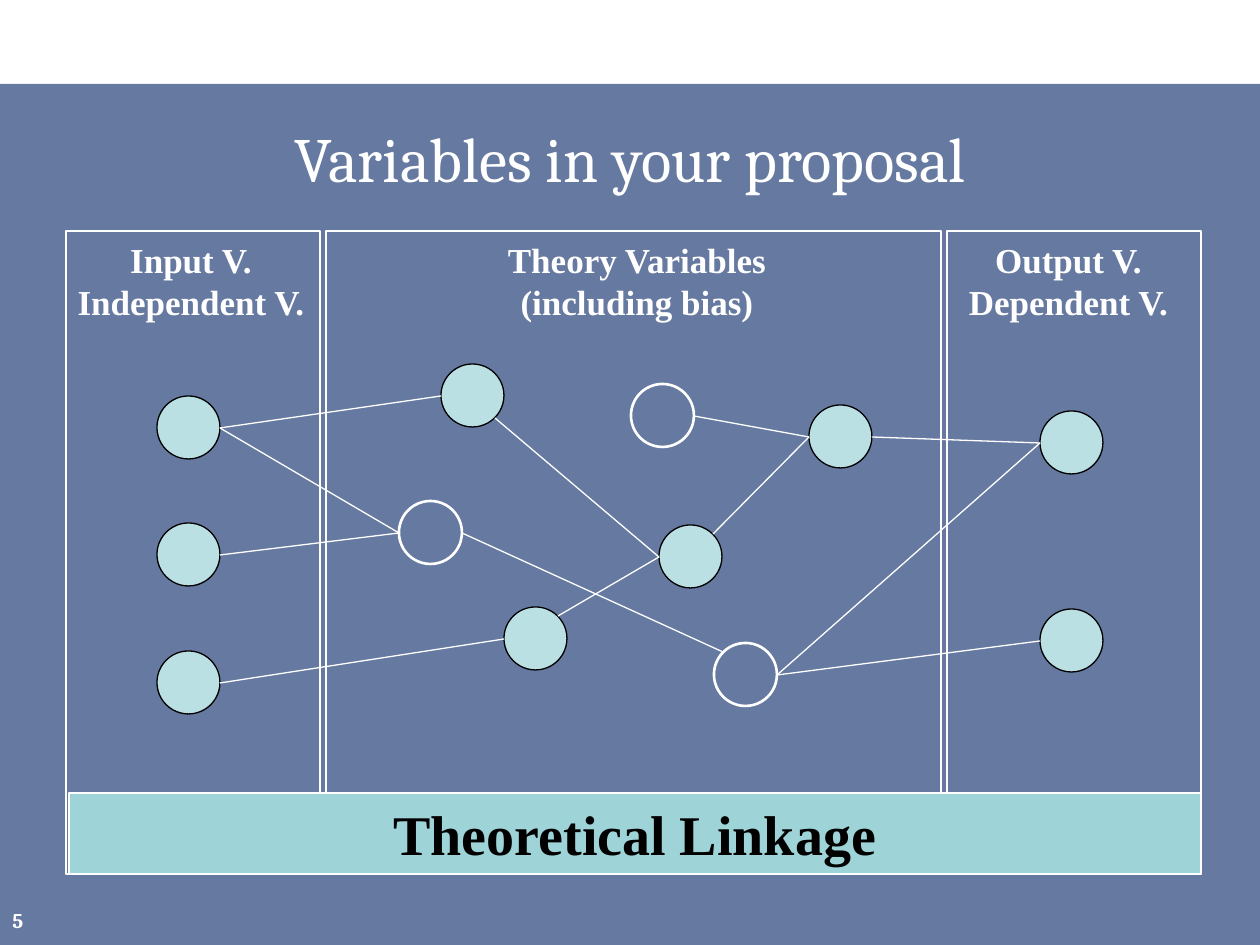
"""Build the slide that links input, theory and output variables."""
from lxml import etree
from pptx import Presentation
from pptx.dml.color import RGBColor
from pptx.enum.shapes import MSO_CONNECTOR, MSO_SHAPE
from pptx.enum.text import MSO_ANCHOR, PP_ALIGN
from pptx.oxml.ns import qn
from pptx.util import Emu, Pt

RECT, OVAL, STRAIGHT = MSO_SHAPE.RECTANGLE, MSO_SHAPE.OVAL, MSO_CONNECTOR.STRAIGHT
LEFT, CENTER, MIDDLE, TOP = PP_ALIGN.LEFT, PP_ALIGN.CENTER, MSO_ANCHOR.MIDDLE, MSO_ANCHOR.TOP
WHITE = RGBColor(0xFF, 0xFF, 0xFF)
BLACK = RGBColor(0x00, 0x00, 0x00)
SLATE = RGBColor(0x66, 0x79, 0xA0)
TEAL = RGBColor(0x9E, 0xD3, 0xD7)
PALE = RGBColor(0xBB, 0xE0, 0xE3)
PX = 914400 / 126
NODE = 63


def add_box(kind, box, fill, line, width):
    sp = s.shapes.add_shape(kind, *[Emu(round(v * PX)) for v in box])
    sp.shadow.inherit = False
    if fill is None:
        sp.fill.background()
    else:
        sp.fill.solid()
        sp.fill.fore_color.rgb = fill
    if line is None:
        sp.line.fill.background()
    else:
        sp.line.color.rgb = line
        sp.line.width = Pt(width)
    return sp


def set_text(sp, lines, color, align, anchor, wrap, font):
    tf = sp.text_frame
    tf.word_wrap = wrap
    tf.vertical_anchor = anchor
    for i, line in enumerate(lines):
        p = tf.paragraphs[0] if i == 0 else tf.add_paragraph()
        p.alignment = align
        r = p.add_run()
        r.text = line
        r.font.color.rgb = color
        for name, value in font.items():
            setattr(r.font, name, value)


prs = Presentation()
prs.slide_width, prs.slide_height = Emu(round(1260 * PX)), Emu(round(945 * PX))
s = prs.slides.add_slide(prs.slide_layouts[6])
add_box(RECT, (0, 84, 1260, 861), SLATE, None, 0)

for left, width in ((66, 254), (947, 254), (326, 615)):
    add_box(RECT, (left, 231, width, 643), None, WHITE, 1.5)

title_font = {"name": "Cambria", "size": Pt(36), "bold": False}
number_font = {"name": "Cambria", "size": Pt(12), "bold": True}
head_font = {"name": "Times New Roman", "size": Pt(20), "bold": True}
bar_font = {"name": "Times New Roman", "size": Pt(32), "bold": True}

texts = [
    ((32, 105, 1197, 105), ["Variables in your proposal"], CENTER, MIDDLE, True, title_font),
    ((0, 895, 63, 50), ["5"], LEFT, MIDDLE, True, number_font),
    ((64, 232, 254, 97), ["Input V.", "Independent V."], CENTER, TOP, False, head_font),
    ((955, 232, 227, 97), ["Output V.", "Dependent V."], CENTER, TOP, False, head_font),
    ((494, 232, 286, 97), ["Theory Variables", "(including bias)"], CENTER, TOP, False, head_font),
]
for box, lines, align, anchor, wrap, font in texts:
    sp = s.shapes.add_textbox(*[Emu(round(v * PX)) for v in box])
    set_text(sp, lines, WHITE, align, anchor, wrap, font)

bar = add_box(RECT, (69, 793, 1132, 81), TEAL, WHITE, 0.75)
set_text(bar, ["Theoretical Linkage"], BLACK, CENTER, MIDDLE, True, bar_font)

filled = {
    "input 1": (157, 396), "input 2": (157, 523), "input 3": (157, 651),
    "output 1": (1040, 411), "output 2": (1040, 609),
    "theory 1": (441, 364), "theory 2": (659, 525),
    "theory 3": (504, 607), "theory 4": (809, 405),
}
hollow = {"bias 1": (631, 384), "bias 2": (399, 501), "bias 3": (714, 643)}
for nodes, fill, line, width in ((filled, PALE, BLACK, 0.75), (hollow, None, WHITE, 1.5)):
    for name, (x, y) in nodes.items():
        add_box(OVAL, (x, y, NODE, NODE), fill, line, width).name = name

nodes = {**filled, **hollow}
ports = {"left": (0, 32), "right": (63, 32), "top left": (9, 9),
         "top right": (54, 9), "bottom right": (54, 54)}
links = [
    ("input 1", "right", "theory 1", "left"),
    ("input 1", "right", "bias 2", "left"),
    ("input 2", "right", "bias 2", "left"),
    ("input 3", "right", "theory 3", "left"),
    ("theory 2", "left", "theory 1", "bottom right"),
    ("theory 3", "top right", "theory 2", "left"),
    ("bias 1", "right", "theory 4", "left"),
    ("theory 2", "top right", "theory 4", "left"),
    ("bias 2", "right", "bias 3", "top left"),
    ("bias 3", "right", "output 2", "left"),
    ("bias 3", "right", "output 1", "left"),
    ("theory 4", "right", "output 1", "left"),
]
for start, start_port, end, end_port in links:
    ends = [a + b for node, port in ((start, start_port), (end, end_port))
            for a, b in zip(nodes[node], ports[port])]
    c = s.shapes.add_connector(STRAIGHT, *[Emu(round(v * PX)) for v in ends])
    c.line.color.rgb = WHITE
    c.line.width = Pt(0.75)
    etree.SubElement(c._element.spPr, qn("a:effectLst"))

prs.save("out.pptx")
